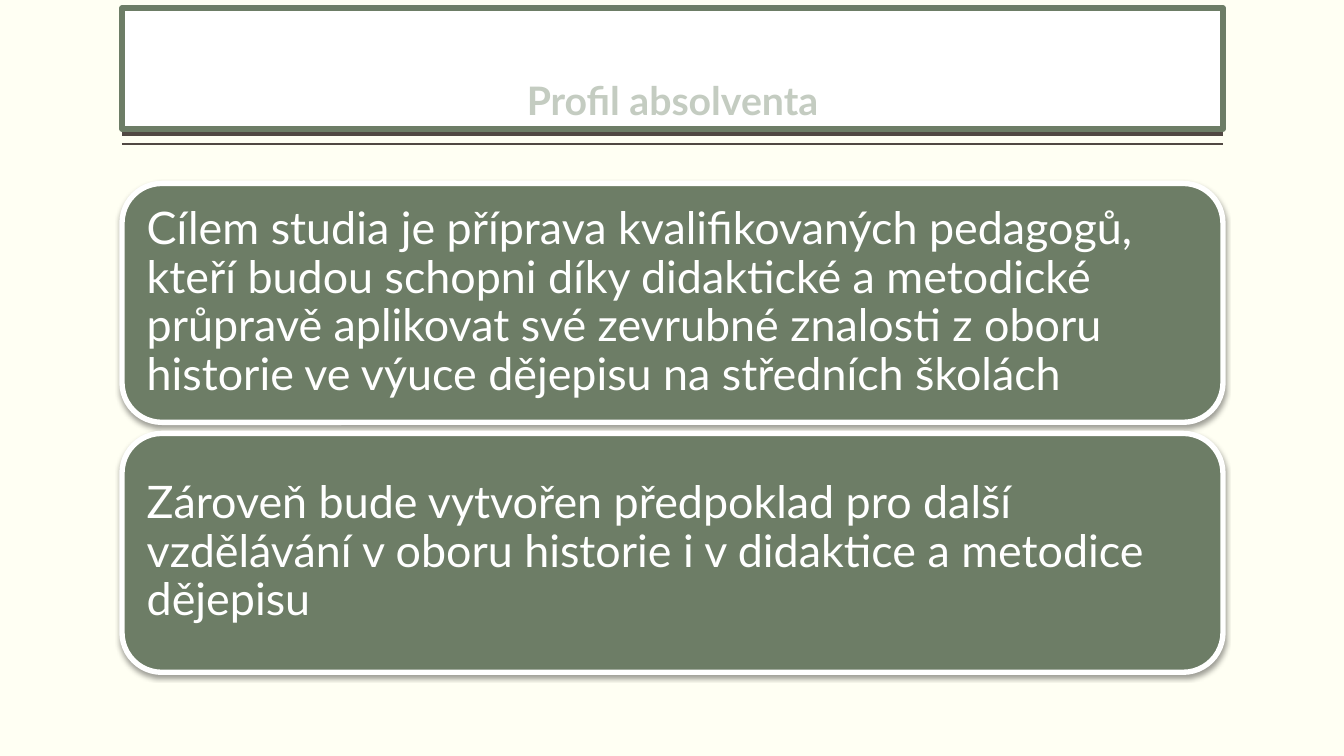
from lxml import etree
from pptx import Presentation
from pptx.dml.color import RGBColor
from pptx.enum.shapes import MSO_CONNECTOR, MSO_SHAPE
from pptx.enum.text import MSO_ANCHOR, PP_ALIGN
from pptx.oxml import parse_xml
from pptx.oxml.ns import qn
from pptx.util import Inches, Pt

TITLE = "Profil absolventa"
GOALS = [
    "Cílem studia je příprava kvalifikovaných pedagogů, kteří budou schopni díky "
    "didaktické a metodické průpravě aplikovat své zevrubné znalosti z oboru "
    "historie ve výuce dějepisu na středních školách",
    "Zároveň bude vytvořen předpoklad pro další vzdělávání v oboru historie i v "
    "didaktice a metodice dějepisu",
]
RULES = [(1.33, 3), (1.43, 1)]

FONT = "Lato"
CREAM, WHITE, GREEN, PALE, BROWN = "FFFFF3", "FFFFFF", "6D7D66", "C4CCC1", "514843"
LEFT, WIDTH = 1.21, 10.92
GOAL_TOP, GOAL_HEIGHT, GOAL_GAP = 1.82, 2.37, 0.11
RECTANGLE, ROUNDED = MSO_SHAPE.RECTANGLE, MSO_SHAPE.ROUNDED_RECTANGLE
STRAIGHT = MSO_CONNECTOR.STRAIGHT
BOTTOM, MIDDLE = MSO_ANCHOR.BOTTOM, MSO_ANCHOR.MIDDLE
CENTER, ALIGN_LEFT = PP_ALIGN.CENTER, PP_ALIGN.LEFT

NS = 'xmlns:a="http://schemas.openxmlformats.org/drawingml/2006/main"'
SHADOW = (
    f'<a:effectLst {NS}><a:outerShdw blurRad="{Pt(3.5)}" dist="{Pt(2)}" '
    'dir="5400000" rotWithShape="0"><a:srgbClr val="000000">'
    '<a:alpha val="38000"/></a:srgbClr></a:outerShdw></a:effectLst>'
)
OUTLINE = (
    f'<a:ln {NS} w="{Pt(1.75)}"><a:solidFill><a:srgbClr val="{GREEN}"/>'
    "</a:solidFill></a:ln>"
)


def rgb(value):
    """Turn a hex string into a colour."""
    return RGBColor.from_string(value)


def add_panel(slide, kind, top, height, fill, line, line_width):
    """Add a full-width filled panel."""
    panel = slide.shapes.add_shape(
        kind, Inches(LEFT), Inches(top), Inches(WIDTH), Inches(height))
    panel.shadow.inherit = False
    panel.fill.solid()
    panel.fill.fore_color.rgb = rgb(fill)
    panel.line.color.rgb = rgb(line)
    panel.line.width = Pt(line_width)
    return panel


def write(panel, text, size, color, align, anchor, side, edge):
    """Write one paragraph in a panel and return it."""
    frame = panel.text_frame
    frame.word_wrap = True
    frame.vertical_anchor = anchor
    frame.margin_left = frame.margin_right = Inches(side)
    frame.margin_top = frame.margin_bottom = Inches(edge)
    paragraph = frame.paragraphs[0]
    paragraph.text = text
    paragraph.alignment = align
    paragraph.line_spacing = 0.9
    paragraph.font.name = FONT
    paragraph.font.size = Pt(size)
    paragraph.font.color.rgb = rgb(color)
    return paragraph


def add_rule(slide, y, width):
    """Add a horizontal rule below the title."""
    rule = slide.shapes.add_connector(
        STRAIGHT, Inches(LEFT), Inches(y), Inches(LEFT + WIDTH), Inches(y))
    rule.line.color.rgb = rgb(BROWN)
    rule.line.width = Pt(width)
    etree.SubElement(rule._element.spPr, qn("a:effectLst"))


def add_title(slide):
    """Add the framed title with outlined letters."""
    frame = add_panel(slide, RECTANGLE, 0.08, 1.2, WHITE, GREEN, 3.78)
    heading = write(frame, TITLE, 28, PALE, CENTER, BOTTOM, 0, 0.05)
    heading.font.bold = True
    heading.runs[0]._r.get_or_add_rPr().insert(0, parse_xml(OUTLINE))


def add_goal(slide, index, text):
    """Add one rounded goal panel with a soft shadow."""
    top = GOAL_TOP + index * (GOAL_HEIGHT + GOAL_GAP)
    goal = add_panel(slide, ROUNDED, top, GOAL_HEIGHT, GREEN, WHITE, 3.82)
    properties = goal._element.spPr
    properties.replace(properties.find(qn("a:effectLst")), parse_xml(SHADOW))
    write(goal, text, 32, WHITE, ALIGN_LEFT, MIDDLE, 0.13, 0.13)


def main():
    """Build and save the slide."""
    deck = Presentation()
    deck.slide_width, deck.slide_height = Inches(13.33), Inches(7.5)
    slide = deck.slides.add_slide(deck.slide_layouts[6])
    slide.background.fill.solid()
    slide.background.fill.fore_color.rgb = rgb(CREAM)
    for y, width in RULES:
        add_rule(slide, y, width)
    add_title(slide)
    for index, text in enumerate(GOALS):
        add_goal(slide, index, text)
    deck.save("out.pptx")


if __name__ == "__main__":
    main()
